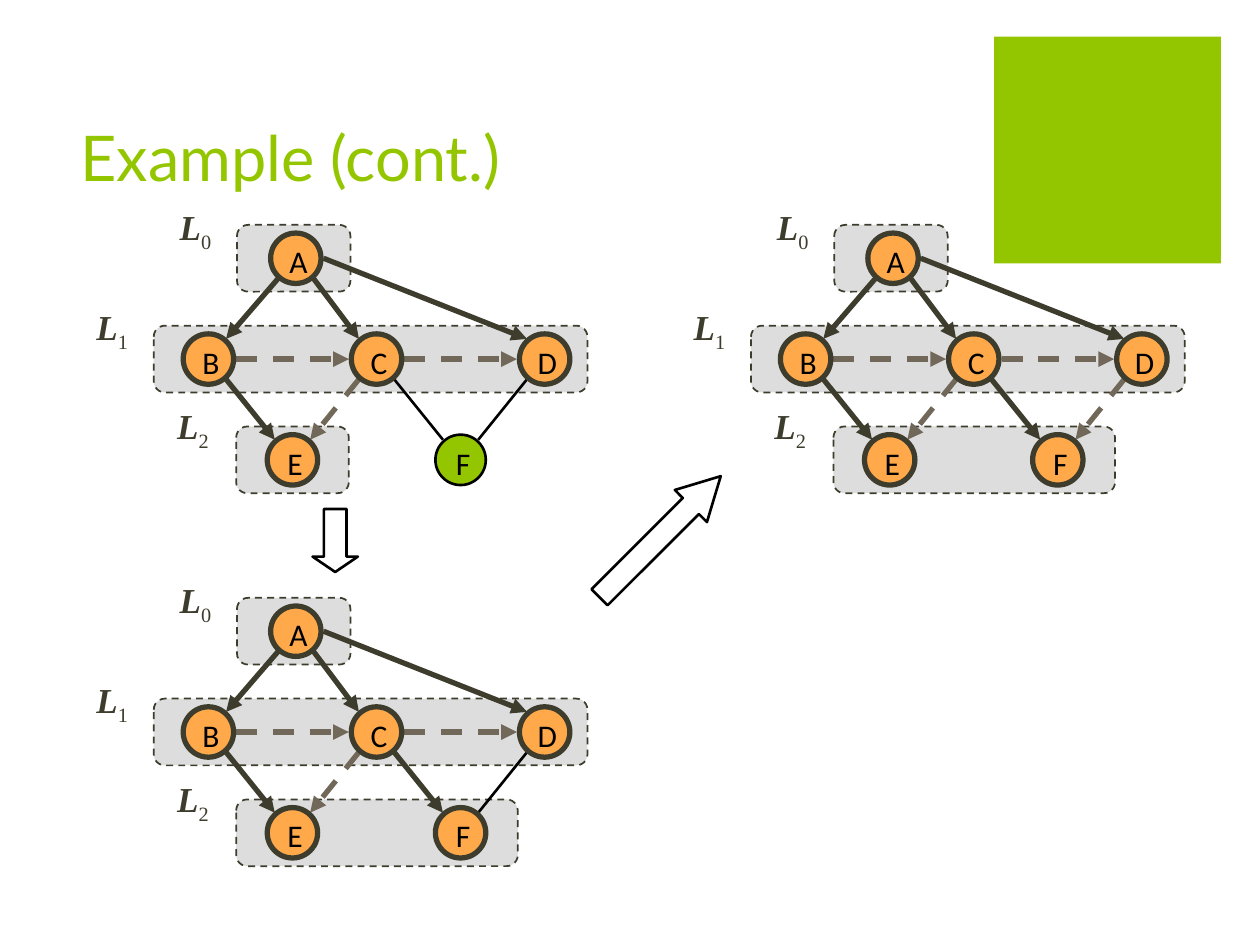
from dataclasses import dataclass

from lxml.etree import SubElement
from pptx import Presentation
from pptx.dml.color import RGBColor
from pptx.enum.dml import MSO_LINE_DASH_STYLE as Dash
from pptx.enum.shapes import MSO_CONNECTOR as Link, MSO_SHAPE as Form
from pptx.enum.text import MSO_ANCHOR as Anchor, PP_ALIGN as Align
from pptx.oxml.ns import qn
from pptx.util import Inches, Pt

GREEN = RGBColor(0x94, 0xC6, 0x00)
ORANGE = RGBColor(0xFF, 0xA9, 0x4A)
GREY = RGBColor(0xDD, 0xDD, 0xDD)
DARK = RGBColor(0x3E, 0x3D, 0x2D)
BROWN = RGBColor(0x71, 0x68, 0x5A)
BLACK = RGBColor(0x00, 0x00, 0x00)

WIDTH, HEIGHT = 10, 7.5
GRAPH_WIDTH, GRAPH_HEIGHT = 4.67, 3.2
COLUMNS, ROWS = 7, 4
NODE = 0.4
LEVEL_HEIGHT = 0.53
PORT_X, PORT_Y, PORT_SIDE = 0.14, 0.16, 0.22

NODES = {"A": (3.04, 1), "B": (2, 2), "C": (4, 2), "D": (6, 2), "E": (3, 3), "F": (5, 3)}
LEVEL_SPANS = [(2.34, 3.69), (1.35, 6.51), (2.33, 3.67)]
WIDE_LEVEL_END = 5.68
LABELS = [(1.51, 0.42), (0.52, 1.41), (1.48, 2.39)]
TREE, CROSS, OPEN = (DARK, 3, False, True), (BROWN, 3, True, True), (BLACK, 1.5, False, False)
SHARED_EDGES = {"AB": TREE, "AC": TREE, "AD": TREE, "BE": TREE,
                "CE": CROSS, "BC": CROSS, "CD": CROSS}


@dataclass
class Box:
    """A region in inches, divided into graph columns and rows."""
    left: float
    top: float
    width: float = GRAPH_WIDTH
    height: float = GRAPH_HEIGHT

    def point(self, column, row):
        """Return the position of a grid crossing."""
        return (self.left + column * self.width / COLUMNS,
                self.top + row * self.height / ROWS)


def add_span(para, text, font, size, color, bold=None, italic=None):
    """Add one styled run."""
    span = para.add_run()
    span.text = text
    span.font.name, span.font.size = font, Pt(size)
    span.font.bold, span.font.italic = bold, italic
    span.font.color.rgb = color
    return span


def add_form(page, form, box, fill=None, line=None, weight=1):
    """Add a preset shape filling the box."""
    shape = page.shapes.add_shape(form, *map(Inches, (box.left, box.top, box.width, box.height)))
    shape.shadow.inherit = False
    if fill is None:
        shape.fill.background()
    else:
        shape.fill.solid()
        shape.fill.fore_color.rgb = fill
    if line is None:
        shape.line.fill.background()
    else:
        shape.line.color.rgb, shape.line.width = line, Pt(weight)
    return shape


def add_text(page, box):
    """Add a wrapping text box and return its frame."""
    frame = page.shapes.add_textbox(
        *map(Inches, (box.left, box.top, box.width, box.height))).text_frame
    frame.word_wrap = True
    return frame


def add_level(page, graph, number, first, last):
    """Add the dashed band of a level and its label."""
    left, middle = graph.point(first, number + 1)
    right, _ = graph.point(last, number + 1)
    band = add_form(page, Form.ROUNDED_RECTANGLE,
                    Box(left, middle - LEVEL_HEIGHT / 2, right - left, LEVEL_HEIGHT), GREY, DARK)
    band.line.dash_style = Dash.DASH
    para = add_text(page, Box(*graph.point(*LABELS[number]), 0.51, 0.43)).paragraphs[0]
    add_span(para, "L", "Times New Roman", 20, DARK, True, True)
    index = add_span(para, str(number), "Times New Roman", 20, DARK, False, False)
    index.font._element.set("baseline", "-25000")


def add_edge(page, graph, edge, style):
    """Join the rims of two nodes."""
    color, weight, dashed, arrow = style
    (x1, y1), (x2, y2) = (graph.point(*NODES[name]) for name in edge)
    side = 1 if x2 > x1 else -1
    level = NODES[edge[0]][1] == NODES[edge[1]][1]
    start = (PORT_SIDE, 0) if level or edge == "AD" else (PORT_X, PORT_Y)
    end = (PORT_SIDE, 0) if level else (PORT_X, PORT_Y)
    link = page.shapes.add_connector(Link.STRAIGHT, *map(Inches, (
        x1 + side * start[0], y1 + start[1], x2 - side * end[0], y2 - end[1])))
    link.line.color.rgb, link.line.width = color, Pt(weight)
    if dashed:
        link.line.dash_style = Dash.DASH
    if arrow:
        SubElement(link.get_or_add_ln(), qn("a:tailEnd"), type="triangle")
    SubElement(link._element.spPr, qn("a:effectLst"))


def add_node(page, graph, name, explored):
    """Add a lettered circle."""
    x, y = graph.point(*NODES[name])
    look = (ORANGE, DARK, 3) if explored else (GREEN, BLACK, 1.5)
    circle = add_form(page, Form.OVAL, Box(x - NODE / 2, y - NODE / 2, NODE, NODE), *look)
    frame = circle.text_frame
    frame.word_wrap, frame.vertical_anchor = False, Anchor.MIDDLE
    frame.margin_left, frame.margin_right = Inches(0.14), Inches(0.1)
    frame.margin_top, frame.margin_bottom = Inches(0.09), Inches(0.05)
    frame.paragraphs[0].alignment = Align.CENTER
    add_span(frame.paragraphs[0], name, "Calibri", 18, BLACK)


def add_graph(page, graph, cf_style, df_style):
    """Add one stage of the search, given the styles of the edges at F."""
    explored = cf_style is not OPEN
    for number, (first, last) in enumerate(LEVEL_SPANS):
        if number == 2 and explored:
            last = WIDE_LEVEL_END
        add_level(page, graph, number, first, last)
    for edge, style in (SHARED_EDGES | {"CF": cf_style, "DF": df_style}).items():
        add_edge(page, graph, edge, style)
    for name in NODES:
        add_node(page, graph, name, name != "F" or explored)


def add_step(page, box, angle, head):
    """Add a hollow arrow between two stages."""
    arrow = add_form(page, Form.RIGHT_ARROW, box, None, BLACK, 1.5)
    arrow.adjustments[1] = head
    arrow.rotation = angle


def add_heading(page, box):
    """Add the corner square and the title."""
    add_form(page, Form.RECTANGLE, Box(7.89, 0.29, 1.8, 1.8), GREEN)
    frame = add_text(page, box)
    frame.vertical_anchor = Anchor.BOTTOM
    add_span(frame.paragraphs[0], "Example (cont.)", "Lato", 36, GREEN)


def main():
    """Build the slide and save it."""
    deck = Presentation()
    deck.slide_width, deck.slide_height = Inches(WIDTH), Inches(HEIGHT)
    page = deck.slides.add_slide(deck.slide_layouts[6])
    add_heading(page, Box(0.54, 0.34, 7.12, 1.25))
    add_graph(page, Box(0.32, 1.25), OPEN, OPEN)
    add_step(page, Box(2.41, 4.11, 0.5, 0.36), 90, 0.34)
    add_graph(page, Box(0.32, 4.21), TREE, OPEN)
    add_step(page, Box(4.56, 4.08, 1.36, 0.36), 315, 0.93)
    add_graph(page, Box(5.06, 1.25), TREE, CROSS)
    deck.save("out.pptx")


if __name__ == "__main__":
    main()
